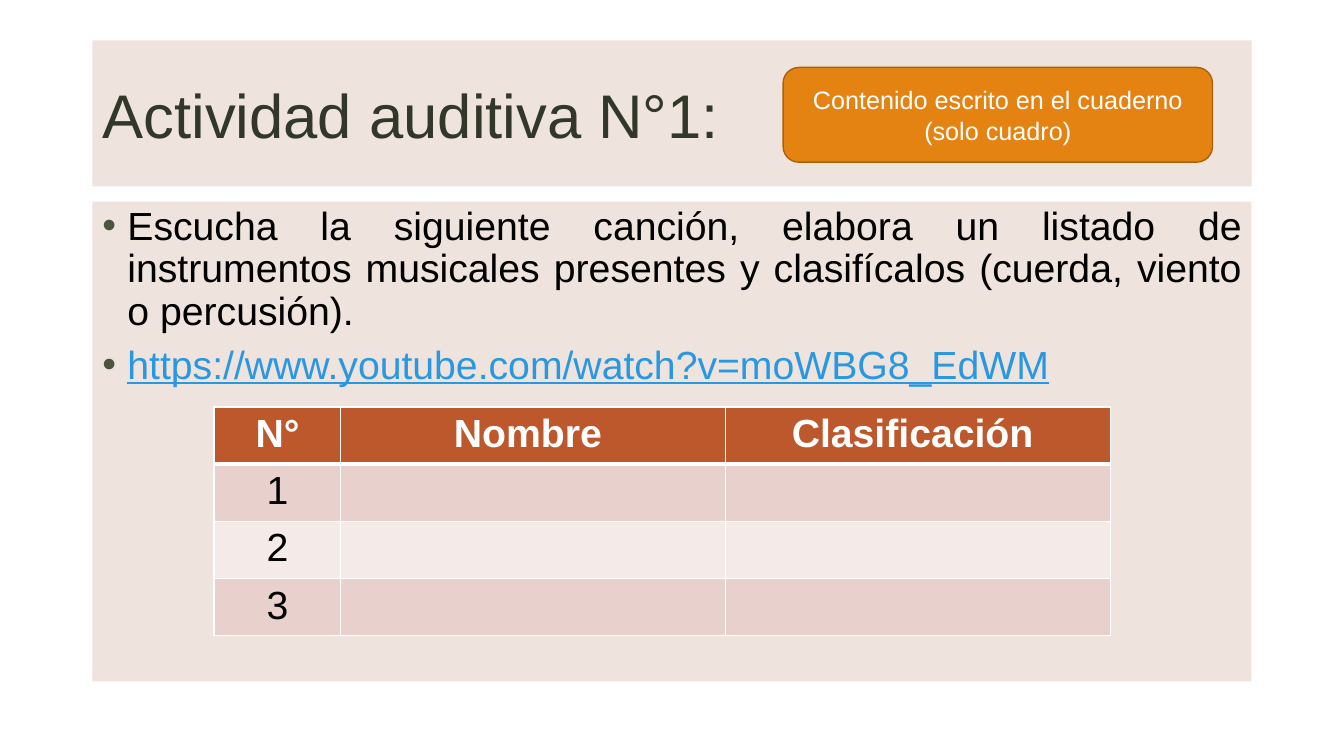
from dataclasses import dataclass

from lxml.etree import SubElement
from pptx import Presentation
from pptx.dml.color import RGBColor
from pptx.enum.shapes import MSO_SHAPE as Shape
from pptx.enum.text import MSO_ANCHOR as Anchor, MSO_AUTO_SIZE as AutoSize, PP_ALIGN as Align
from pptx.oxml import parse_xml
from pptx.oxml.ns import nsdecls, qn
from pptx.util import Pt


@dataclass(frozen=True)
class Theme:
    font: str = "Arial"
    title_size: int = 44
    text_size: int = 28
    note_size: int = 18
    panel: str = "EBDCD5"
    panel_alpha: int = 80
    title: str = "313829"
    text: str = "000000"
    light: str = "FFFFFF"
    bullet: str = "4A543E"
    link: str = "2998E3"
    note: str = "E48312"
    note_line: str = "A9610D"
    header: str = "BD582C"
    bands: tuple = ("E8D1CD", "F4EAE8")


THEME = Theme()
PANEL_LEFT, PANEL_WIDTH = 66, 828


def color(value):
    return RGBColor.from_string(value)


def apply_format(target, values):
    for name, value in values.items():
        setattr(target, name, value)


def place(box, left, top, width, height):
    apply_format(box, {"left": Pt(left), "top": Pt(top),
                       "width": Pt(width), "height": Pt(height)})


def write(para, text, size, text_color, align, **font_values):
    """Fill one paragraph with a single formatted span."""
    para.alignment = align
    span = para.add_run()
    span.text = text
    apply_format(span.font, {"name": THEME.font, "size": Pt(size), **font_values})
    span.font.color.rgb = color(text_color)


def fill_panel(box):
    """Give a box the translucent panel fill."""
    box.fill.solid()
    box.fill.fore_color.rgb = color(THEME.panel)
    tint = box.fill._xPr.find(qn("a:solidFill"))[0]
    SubElement(tint, qn("a:alpha"), val=str(THEME.panel_alpha * 1000))


def add_title(page, text):
    box = page.shapes.title
    place(box, PANEL_LEFT, 28.8, PANEL_WIDTH, 104.4)
    fill_panel(box)
    apply_format(box.text_frame, {"word_wrap": True, "auto_size": AutoSize.NONE,
                                  "vertical_anchor": Anchor.MIDDLE})
    write(box.text_frame.paragraphs[0], text, THEME.title_size, THEME.title, Align.LEFT)


def add_bullet(para):
    properties = para._p.get_or_add_pPr()
    properties.set("marL", str(Pt(18)))
    properties.set("indent", str(-Pt(18)))
    tint = SubElement(properties, qn("a:buClr"))
    SubElement(tint, qn("a:srgbClr"), val=THEME.bullet)
    SubElement(properties, qn("a:buFont"), typeface=THEME.font)
    SubElement(properties, qn("a:buChar"), char="•")


def add_instructions(page, items):
    box = page.shapes.add_textbox(Pt(PANEL_LEFT), Pt(144), Pt(PANEL_WIDTH), Pt(342.7))
    fill_panel(box)
    frame = box.text_frame
    frame.word_wrap = True
    for index, (text, text_color, underline) in enumerate(items):
        para = frame.add_paragraph() if index else frame.paragraphs[0]
        add_bullet(para)
        apply_format(para, {"line_spacing": 0.9, "space_before": Pt(8.4 if index else 0)})
        write(para, text, THEME.text_size, text_color, Align.JUSTIFY, underline=underline)


def add_borders(cell, widths):
    """Draw the left, right, top and bottom borders, ahead of the cell fill."""
    properties = cell._tc.get_or_add_tcPr()
    for index, (side, width) in enumerate(zip("LRTB", widths)):
        properties.insert(index, parse_xml(
            f'<a:ln{side} {nsdecls("a")} w="{Pt(width)}"><a:solidFill>'
            f'<a:srgbClr val="{THEME.light}"/></a:solidFill></a:ln{side}>'))


def add_answer_table(page, headings, row_count):
    column_widths, row_height = (90.6, 274.8, 274.8), 38.4
    rows = [headings] + [(str(number), "", "") for number in range(1, row_count + 1)]
    table = page.shapes.add_table(len(rows), len(headings), Pt(152.9), Pt(290.7),
                                  Pt(sum(column_widths)), Pt(row_height * len(rows))).table
    for column, width in zip(table.columns, column_widths):
        column.width = Pt(width)
    for row_index, texts in enumerate(rows):
        table.rows[row_index].height = Pt(row_height)
        is_header = row_index == 0
        background = THEME.header if is_header else THEME.bands[(row_index - 1) % 2]
        for column_index, text in enumerate(texts):
            cell = table.cell(row_index, column_index)
            cell.fill.solid()
            cell.fill.fore_color.rgb = color(background)
            add_borders(cell, (1, 1, 3 if row_index == 1 else 1, 3 if is_header else 1))
            if text:
                write(cell.text_frame.paragraphs[0], text, THEME.text_size,
                      THEME.light if is_header else THEME.text, Align.CENTER, bold=is_header)


def add_note(page, text):
    box = page.shapes.add_shape(Shape.ROUNDED_RECTANGLE, Pt(559.4), Pt(48.2), Pt(306.7), Pt(67.7))
    box.shadow.inherit = False
    box.fill.solid()
    box.fill.fore_color.rgb = color(THEME.note)
    box.line.color.rgb = color(THEME.note_line)
    box.line.width = Pt(1)
    apply_format(box.text_frame, {"word_wrap": True, "vertical_anchor": Anchor.MIDDLE})
    write(box.text_frame.paragraphs[0], text, THEME.note_size, THEME.light, Align.CENTER)


def main():
    deck = Presentation()
    apply_format(deck, {"slide_width": Pt(960), "slide_height": Pt(540)})
    page = deck.slides.add_slide(deck.slide_layouts.get_by_name("Title Only"))

    # Heading and instructions
    add_title(page, "Actividad auditiva N°1:")
    add_instructions(page, [
        ("Escucha la siguiente canción, elabora un listado de instrumentos musicales "
         "presentes y clasifícalos (cuerda, viento o percusión).", THEME.text, False),
        ("https://www.youtube.com/watch?v=moWBG8_EdWM", THEME.link, True),
    ])

    # Table to fill in, and the notebook reminder
    add_answer_table(page, ("N°", "Nombre ", "Clasificación "), 3)
    add_note(page, "Contenido escrito en el cuaderno (solo cuadro)")
    deck.save("out.pptx")


if __name__ == "__main__":
    main()
